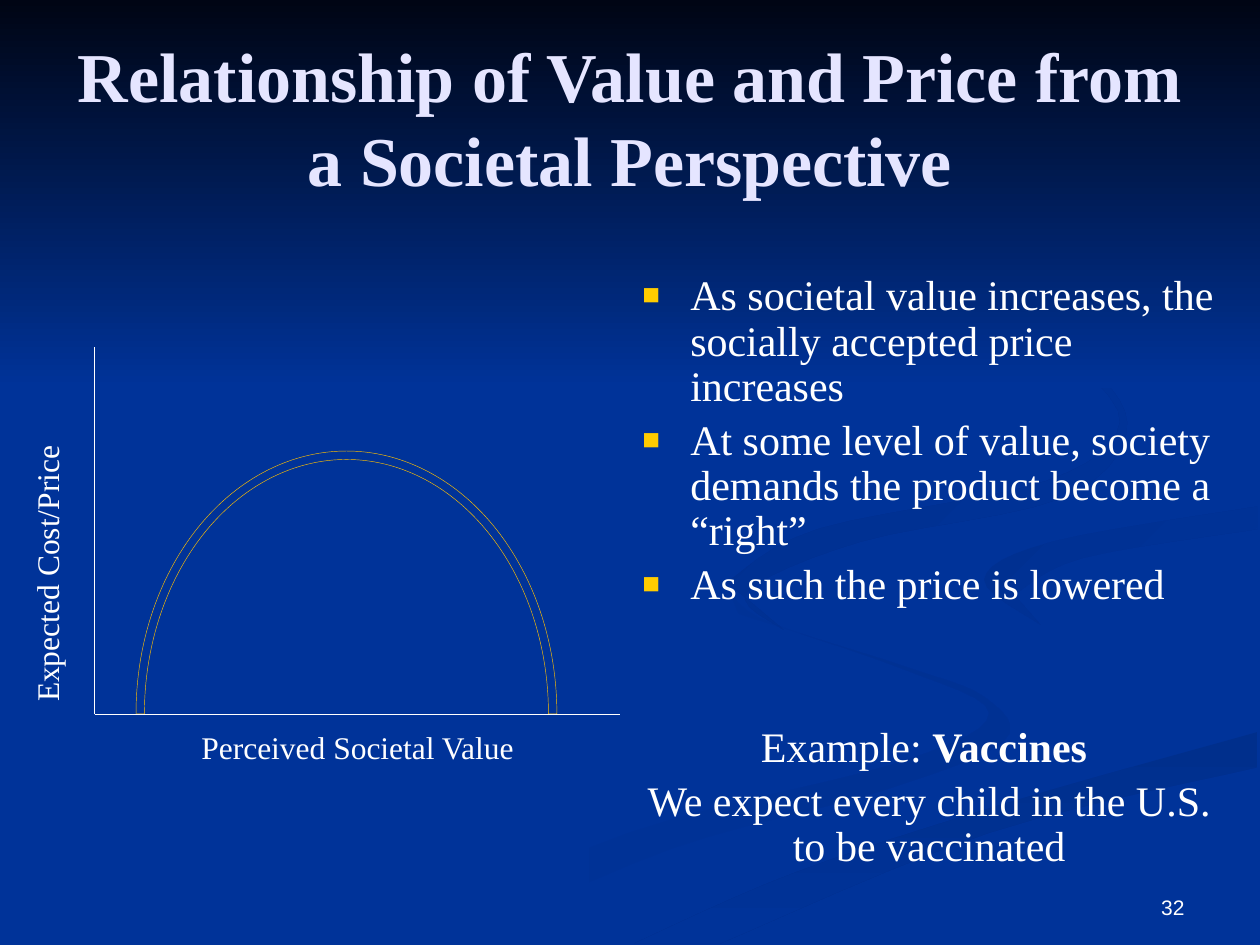
from pptx import Presentation
from pptx.util import Inches, Pt
from pptx.dml.color import RGBColor
from pptx.enum.shapes import MSO_CONNECTOR, MSO_SHAPE
from pptx.enum.text import MSO_ANCHOR, PP_ALIGN
from lxml.etree import SubElement
from pptx.oxml.ns import qn

SERIF, SANS = "Times New Roman", "Arial"
BLUE, WHITE, GOLD = "003399", "FFFFFF", "FFCC00"

TITLE = "Relationship of Value and Price from a Societal Perspective"
POINTS = [
    "As societal value increases, the socially accepted price increases",
    "At some level of value, society demands the product become a “right”",
    "As such the price is lowered",
]
# Each closing line is a list of (text, bold) runs
CLOSING = [
    [("Example: ", False), ("Vaccines ", True)],
    [("We expect every child in the U.S. to be vaccinated", False)],
]

# Backdrop ribbons: first colour, last colour, clockwise angle, two edges
RIBBONS = [
    (BLUE, "003193", 0,
     [(5.75, 4.59), (6.02, 4.9), (7.15, 5.28), (7.81, 5.53), (7.97, 5.88),
      (6.99, 6.28), (5.32, 6.74), (3.61, 7.49)],
     [(3, 7.49), (4.99, 6.61), (7.14, 6.05), (7.85, 5.66), (7.14, 5.3),
      (5.86, 4.87)]),
    ("002F8C", BLUE, 90,
     [(5.03, 7.49), (6.3, 6.93), (7.97, 6.38), (9.98, 5.81)],
     [(9.98, 6.09), (7.85, 6.61), (5.71, 7.49)]),
    ("003091", BLUE, 45,
     [(8.26, 4.96), (7.81, 4.6), (8.35, 4.3), (9.98, 4.02)],
     [(9.98, 4.2), (8.59, 4.43), (8.05, 4.72)]),
    ("002F8E", BLUE, 45,
     [(7.62, 2.33), (8.64, 2.91), (8.94, 3.44), (8.41, 3.96), (6.83, 4.3),
      (5.93, 4.7), (6.22, 5)],
     [(5.77, 4.62), (6.49, 4.2), (8.3, 3.82), (8.89, 3.35), (8.46, 2.79)]),
]


def color(code):
    return RGBColor.from_string(code)


def smooth(knots, steps=6):
    """Points of a Catmull-Rom curve through the knots."""
    ends = [knots[0], *knots, knots[-1]]
    curve = []
    for quad in zip(ends, ends[1:], ends[2:], ends[3:]):
        for step in range(steps):
            t = step / steps
            curve.append(tuple(
                b + t * (c - a) / 2
                + t**2 * (2 * a - 5 * b + 4 * c - d) / 2
                + t**3 * (3 * b - a - 3 * c + d) / 2
                for a, b, c, d in zip(*quad)))
    return curve + [knots[-1]]


def shade(shape, first, last, angle):
    """Fill with one or two colours, without outline or shadow."""
    shape.shadow.inherit = False
    shape.line.fill.background()
    if first == last:
        shape.fill.solid()
        shape.fill.fore_color.rgb = color(first)
        return
    shape.fill.gradient()
    shape.fill.gradient_angle = -angle % 360
    for stop, code, place in zip(shape.fill.gradient_stops, (first, last), (0, 1)):
        stop.color.rgb = color(code)
        stop.position = place


def style(run, size, font=SERIF, bold=False, code=WHITE):
    run.font.size, run.font.name, run.font.bold = Pt(size), font, bold
    run.font.color.rgb = color(code)


def frame(box):
    text = slide.shapes.add_textbox(*map(Inches, box)).text_frame
    text.word_wrap = True
    return text


def label(box, words, size, align=PP_ALIGN.LEFT, anchor=MSO_ANCHOR.TOP, **look):
    text = frame(box)
    text.text = words
    text.vertical_anchor = anchor
    text.paragraphs[0].alignment = align
    style(text.paragraphs[0].runs[0], size, **look)
    return text


def bullet(para):
    props = para._p.get_or_add_pPr()
    props.set("marL", str(Inches(0.38)))
    props.set("indent", str(Inches(-0.38)))
    tint = SubElement(props, qn("a:buClr"))
    SubElement(tint, qn("a:srgbClr"), val=GOLD)
    SubElement(props, qn("a:buSzPct"), val="70000")
    SubElement(props, qn("a:buFont"), typeface=SANS)
    SubElement(props, qn("a:buChar"), char="■")


deck = Presentation()
deck.slide_width, deck.slide_height = Inches(10), Inches(7.5)
slide = deck.slides.add_slide(deck.slide_layouts[6])

# Backdrop
slide.background.fill.solid()
slide.background.fill.fore_color.rgb = color(BLUE)
for first, last, angle, *edges in RIBBONS:
    start, *rest = [(Inches(x), Inches(y)) for edge in edges for x, y in smooth(edge)]
    pen = slide.shapes.build_freeform(*start)
    pen.add_line_segments(rest, close=True)
    shade(pen.convert_to_shape(), first, last, angle)
sky = slide.shapes.add_shape(MSO_SHAPE.RECTANGLE, 0, 0, Inches(10), Inches(3.08))
shade(sky, "000514", BLUE, 90)

# Title
label((0.5, 0.3, 9, 1.25), TITLE, 40, PP_ALIGN.CENTER, MSO_ANCHOR.MIDDLE,
      bold=True, code="E5E5FF")

# Bullets and closing example
body = frame((5, 2.13, 4.75, 4.95))
rows = [[(words, False)] for words in POINTS] + CLOSING
for i, row in enumerate(rows):
    para = body.paragraphs[0] if i == 0 else body.add_paragraph()
    para.line_spacing = 0.9
    para.space_before = Pt(67 if i == len(POINTS) else 4.8)
    if i < len(POINTS):
        bullet(para)
    else:
        para.alignment = PP_ALIGN.CENTER
    for words, bold in row:
        run = para.add_run()
        run.text = words
        style(run, 24, bold=bold)

# Axes
origin = (0.75, 5.67)
for end in [(0.75, 2.75), (4.92, 5.67)]:
    axis = slide.shapes.add_connector(MSO_CONNECTOR.STRAIGHT, *map(Inches, origin + end))
    axis.line.color.rgb = color(WHITE)
    axis.line.width = Pt(0.75)
    SubElement(axis._element.spPr, qn("a:effectLst"))

# Price curve
curve = slide.shapes.add_shape(
    MSO_SHAPE.BLOCK_ARC, *map(Inches, (1.08, 3.58, 3.34, 4.17)))
curve.adjustments[2] = 0.02
shade(curve, BLUE, BLUE, 0)
curve.line.color.rgb = color("FFC000")
curve.line.width = Pt(0.25)

# Axis labels and page number
label((1.5, 5.73, 3.42, 0.4), "Perceived Societal Value", 18)
price = label((0.17, 2.67, 0.5, 3), "Expected Cost/Price", 18)
price._txBody.bodyPr.set("vert", "vert270")
label((7.17, 6.83, 2.33, 0.52), "32", 12, PP_ALIGN.RIGHT, MSO_ANCHOR.BOTTOM, font=SANS)

deck.save("out.pptx")
